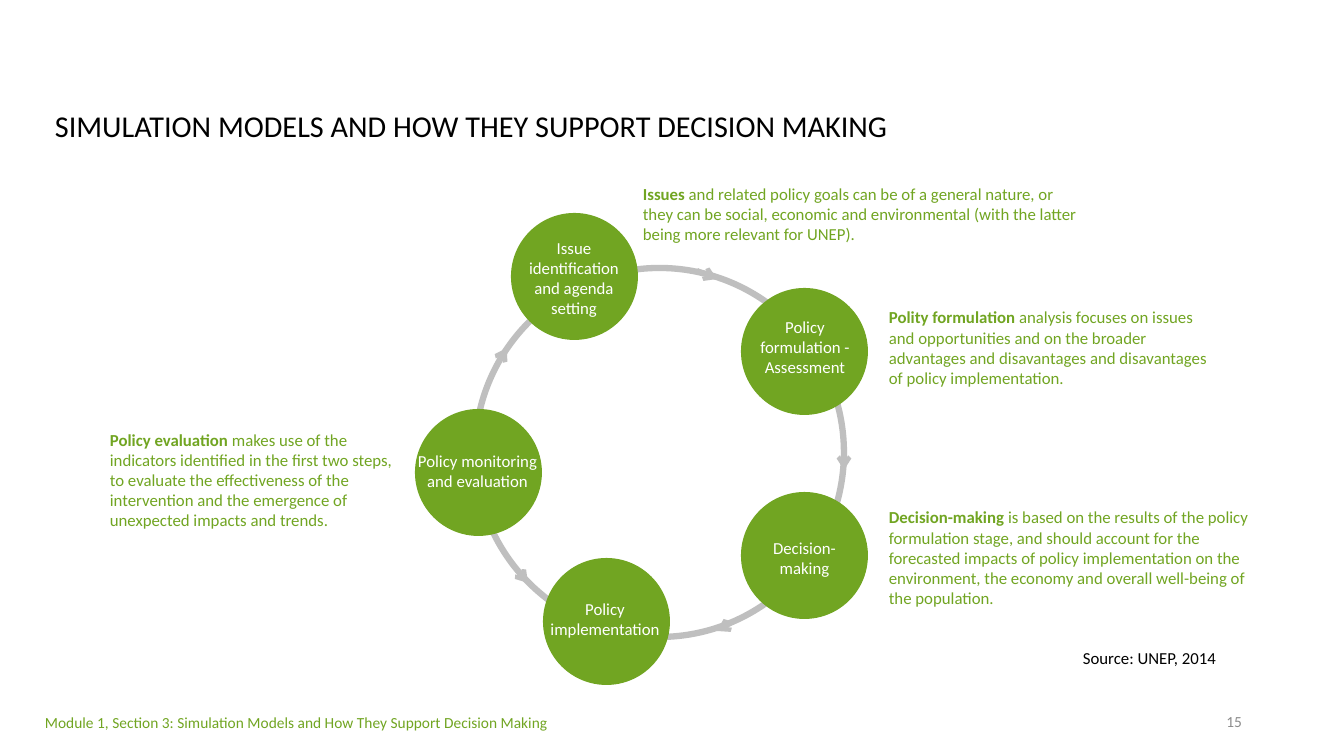
from lxml import etree
from pptx import Presentation
from pptx.dml.color import RGBColor
from pptx.enum.shapes import MSO_CONNECTOR, MSO_SHAPE
from pptx.enum.text import MSO_ANCHOR, PP_ALIGN
from pptx.oxml.ns import qn
from pptx.util import Pt

OVAL = MSO_SHAPE.OVAL
LINE = MSO_CONNECTOR.STRAIGHT
TOP, MIDDLE = MSO_ANCHOR.TOP, MSO_ANCHOR.MIDDLE
LEFT, MID, RIGHT = PP_ALIGN.LEFT, PP_ALIGN.CENTER, PP_ALIGN.RIGHT
SCALE = 914400 / 100.8
NODE = 127
RING = (475, 268, 369, 369)
HUES = {"green": "71A522", "gray": "BFBFBF", "page": "8C8C8C",
        "black": "000000", "white": "FFFFFF"}

STEPS = [
    ((511, 213), (510, 232, 128, 92), "Issue identification and agenda setting"),
    ((741, 288), (741, 311, 128, 72), "Policy formulation - Assessment"),
    ((741, 492), (745, 531, 119, 53), "Decision-making"),
    ((543, 558), (537, 583, 136, 72), "Policy implementation"),
    ((415, 409), (406, 435, 143, 72), "Policy monitoring and evaluation"),
]
ARROWS = [
    (697, 270, 717, 279),
    (844, 453, 844, 470),
    (739, 619, 717, 631),
    (511, 563, 528, 583),
    (498, 363, 507, 348),
]
NOTES = [
    ((633, 161, 462, 105), "Issues ",
     "and related policy goals can be of a general nature, or they can be "
     "social, economic and environmental (with the latter being more relevant "
     "for UNEP)."),
    ((879, 295, 351, 105), "Polity formulation ",
     "analysis focuses on issues and opportunities and on the broader "
     "advantages and disavantages and disavantages of policy implementation."),
    ((879, 505, 390, 105), "Decision-making ",
     "is based on the results of the policy formulation stage, and should "
     "account for the forecasted impacts of policy implementation on the "
     "environment, the economy and overall well-being of the population."),
    ((100, 414, 310, 132), "Policy evaluation ",
     "makes use of the indicators identified in the first two steps, to "
     "evaluate the effectiveness of the intervention and the emergence of "
     "unexpected impacts and trends."),
]


def px(*vals):
    """Turn pixel lengths into EMU."""
    return [round(val * SCALE) for val in vals]


def paint(hue):
    """Look up a colour by name."""
    return RGBColor.from_string(HUES[hue])


def add_text(slide, box, runs, hue, size=12, align=LEFT, anchor=MIDDLE):
    """Add a wrapped text box from (text, bold) runs."""
    frame = slide.shapes.add_textbox(*px(*box)).text_frame
    frame.word_wrap = True
    frame.vertical_anchor = anchor
    para = frame.paragraphs[0]
    para.alignment = align
    for text, bold in runs:
        run = para.add_run()
        run.text = text
        style = {"name": "Calibri", "size": Pt(size), "bold": bold}
        for key, val in style.items():
            setattr(run.font, key, val)
        run.font.color.rgb = paint(hue)


def add_ring(slide):
    """Draw the circular track behind the steps."""
    ring = slide.shapes.add_shape(OVAL, *px(*RING))
    ring.shadow.inherit = False
    ring.fill.background()
    ring.line.color.rgb = paint("gray")
    ring.line.width = Pt(4.5)


def add_node(slide, left, top):
    """Draw one filled step circle."""
    node = slide.shapes.add_shape(OVAL, *px(left, top, NODE, NODE))
    node.shadow.inherit = False
    node.fill.solid()
    node.fill.fore_color.rgb = paint("green")
    node.line.fill.background()


def add_arrow(slide, ends):
    """Draw a short arrow along the track."""
    arrow = slide.shapes.add_connector(LINE, *px(*ends))
    arrow.line.color.rgb = paint("gray")
    arrow.line.width = Pt(3)
    props = arrow.element.spPr
    etree.SubElement(props.find(qn("a:ln")), qn("a:tailEnd"), type="arrow")
    etree.SubElement(props, qn("a:effectLst"))


def main():
    """Build the policy cycle slide."""
    deck = Presentation()
    deck.slide_width, deck.slide_height = px(1344, 756)
    slide = deck.slides.add_slide(deck.slide_layouts[6])
    add_ring(slide)
    title = "SIMULATION MODELS AND HOW THEY SUPPORT DECISION MAKING"
    add_text(slide, (45, 99, 1258, 52), [(title, False)], "black", 21.6)
    add_text(slide, (950, 701, 302, 40), [("15", False)], "page", 11, RIGHT)
    add_text(slide, (1073, 643, 175, 30), [("Source: UNEP, 2014", False)],
             "black", anchor=TOP)
    foot = ("Module 1, Section 3: Simulation Models and How They Support "
            "Decision Making")
    add_text(slide, (35, 708, 580, 40), [(foot, False)], "green", 11, anchor=TOP)
    for box, head, body in NOTES:
        add_text(slide, box, [(head, True), (body, False)], "green")
    for ends in ARROWS:
        add_arrow(slide, ends)
    for spot, box, label in STEPS:
        add_node(slide, *spot)
        add_text(slide, box, [(label, False)], "white", align=MID)
    deck.save("out.pptx")


if __name__ == "__main__":
    main()
